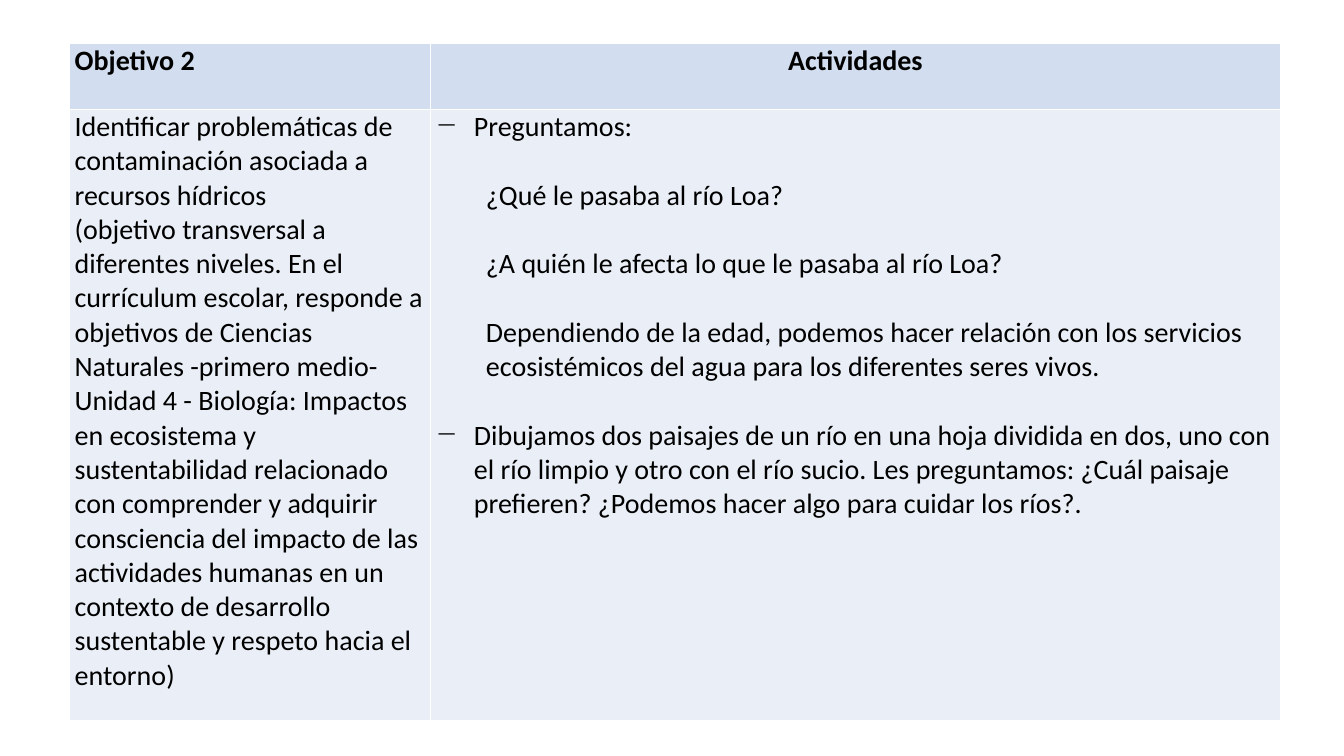
"""Build a slide with a table of one learning objective and its activities."""
from lxml import etree
from pptx import Presentation
from pptx.dml.color import RGBColor
from pptx.enum.text import PP_ALIGN
from pptx.oxml.ns import qn
from pptx.util import Inches, Pt

LEFT, CENTER = PP_ALIGN.LEFT, PP_ALIGN.CENTER
THEME = {
    "font": "Calibri",
    "size": Pt(20),
    "gap": Pt(24.5),
    "text": RGBColor.from_string("000000"),
    "header": RGBColor.from_string("D2DEEF"),
    "body": RGBColor.from_string("EAEFF7"),
    "border": "FFFFFF",
}
COLUMN_WIDTHS = [3.58, 8.43]
ROW_HEIGHTS = [0.66, 6.06]

OBJECTIVE = [
    "Identificar problemáticas de contaminación asociada a recursos hídricos",
    "(objetivo transversal a diferentes niveles. En el currículum escolar, "
    "responde a objetivos de Ciencias Naturales -primero medio- Unidad 4 - "
    "Biología: Impactos en ecosistema y sustentabilidad relacionado con "
    "comprender y adquirir consciencia del impacto de las actividades humanas "
    "en un contexto de desarrollo sustentable y respeto hacia el entorno)",
]
ACTIVITIES = [
    ("Preguntamos:", True),
    ("¿Qué le pasaba al río Loa?", False),
    ("¿A quién le afecta lo que le pasaba al río Loa?", False),
    ("Dependiendo de la edad, podemos hacer relación con los servicios "
     "ecosistémicos del agua para los diferentes seres vivos.", False),
    ("Dibujamos dos paisajes de un río en una hoja dividida en dos, uno con "
     "el río limpio y otro con el río sucio. Les preguntamos: ¿Cuál paisaje "
     "prefieren? ¿Podemos hacer algo para cuidar los ríos?.", True),
]


def fill_cell(cell, texts, color, bold=False, align=LEFT):
    """Format a cell and write one paragraph per text."""
    cell.margin_left = cell.margin_right = Inches(0.05)
    cell.margin_top = cell.margin_bottom = 0
    tcPr = cell._tc.get_or_add_tcPr()
    for side in ("lnL", "lnR", "lnT", "lnB"):
        ln = etree.SubElement(tcPr, qn(f"a:{side}"), w=str(Pt(1)))
        solid = etree.SubElement(ln, qn("a:solidFill"))
        etree.SubElement(solid, qn("a:srgbClr"), val=THEME["border"])
    cell.fill.solid()
    cell.fill.fore_color.rgb = color
    tf = cell.text_frame
    tf.text = "\n".join(texts)
    for p in tf.paragraphs:
        p.alignment = align
        p.font.name = THEME["font"]
        p.font.size = THEME["size"]
        p.font.bold = bold
        p.font.color.rgb = THEME["text"]


prs = Presentation()
prs.slide_width, prs.slide_height = Inches(13.33), Inches(7.5)
s = prs.slides.add_slide(prs.slide_layouts[6])

table = s.shapes.add_table(2, 2, Inches(0.69), Inches(0.43),
                           Inches(sum(COLUMN_WIDTHS)),
                           Inches(sum(ROW_HEIGHTS))).table
table.horz_banding = False
for column, width in zip(table.columns, COLUMN_WIDTHS):
    column.width = Inches(width)
for row, height in zip(table.rows, ROW_HEIGHTS):
    row.height = Inches(height)

fill_cell(table.cell(0, 0), ["Objetivo 2"], THEME["header"], bold=True)
fill_cell(table.cell(0, 1), ["Actividades"], THEME["header"], bold=True, align=CENTER)
fill_cell(table.cell(1, 0), OBJECTIVE, THEME["body"])
activities = table.cell(1, 1)
fill_cell(activities, [text for text, _ in ACTIVITIES], THEME["body"])

for i, (p, (_, bulleted)) in enumerate(zip(activities.text_frame.paragraphs, ACTIVITIES)):
    p.space_before = THEME["gap"] if i else Pt(0)
    pPr = p._p.get_or_add_pPr()
    pPr.set("marL", str(Inches(0.38 if bulleted else 0.5)))
    pPr.set("indent", str(Inches(-0.38 if bulleted else 0)))
    if bulleted:
        bullet = etree.Element(qn("a:buChar"), char="−")
        pPr.find(qn("a:defRPr")).addprevious(bullet)

prs.save("out.pptx")
